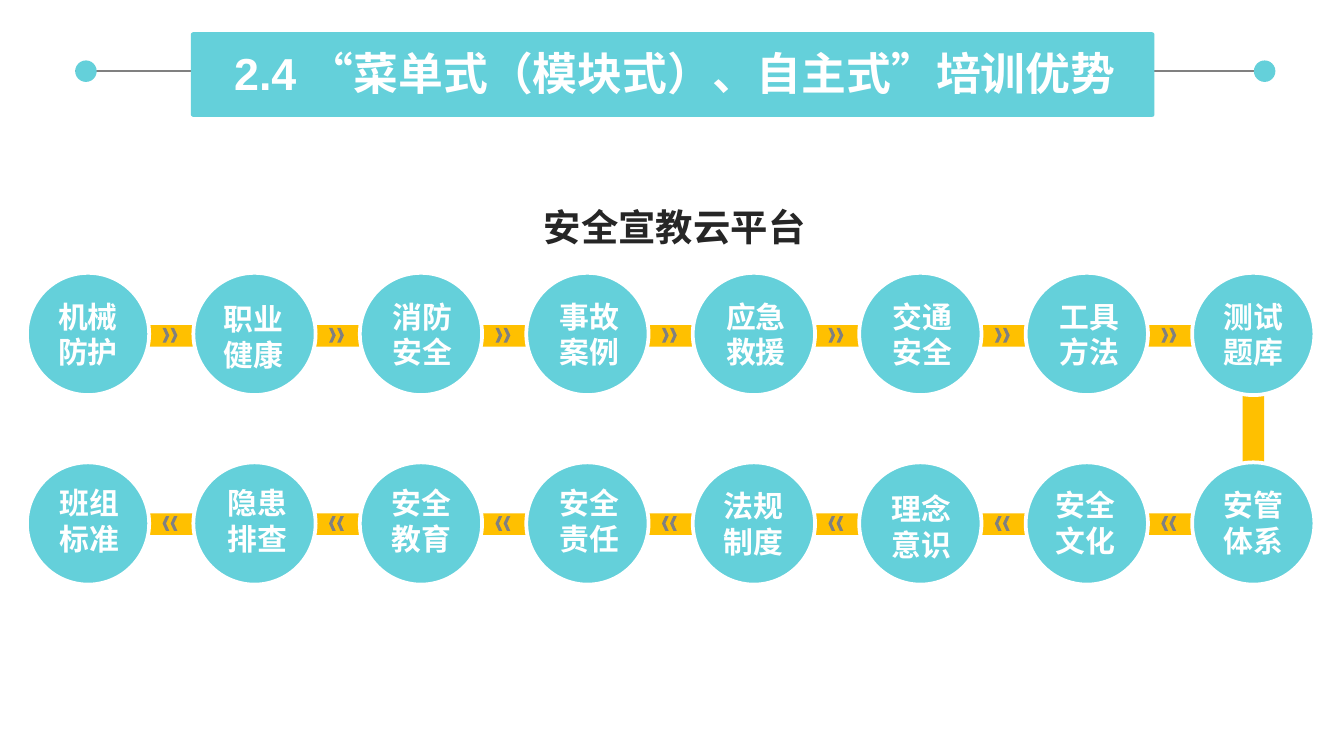
import pptx
import pptx.dml.color
import pptx.enum.shapes
import pptx.enum.text
import pptx.oxml.ns
import pptx.util
from lxml import etree

Inches = pptx.util.Inches
Pt = pptx.util.Pt
SHAPE = pptx.enum.shapes.MSO_SHAPE

TEAL, AMBER, GREY, WHITE, DARK = "64D0DA", "FFC000", "808080", "FFFFFF", "262626"
PITCH = 8.67 / 7
DIAMETER = 0.91
TOP_ROW = [
    ("机械防护", 0.27, 2.17), ("职业健康", 1.5, 2.19), ("消防安全", 2.76, 2.17), ("事故案例", 4, 2.17),
    ("应急救援", 5.24, 2.17), ("交通安全", 6.48, 2.17), ("工具方法", 7.72, 2.17), ("测试题库", 8.94, 2.17),
]
BOTTOM_ROW = [
    ("班组标准", 0.28, 3.56), ("隐患排查", 1.53, 3.56), ("安全教育", 2.75, 3.56), ("安全责任", 4, 3.56),
    ("法规制度", 5.22, 3.58), ("理念意识", 6.47, 3.6), ("安全文化", 7.69, 3.57), ("安管体系", 8.94, 3.57),
]


def rgb(value):
    return pptx.dml.color.RGBColor.from_string(value)


class Deck:
    """Draws styled elements on the current slide."""

    font = "Arial"

    def __init__(self, prs):
        self.s = prs.slides.add_slide(prs.slide_layouts[6])

    def shape(self, kind, x, y, w, h, fill, outline=None, rotation=0, parent=None):
        shapes = (parent or self.s).shapes
        sp = shapes.add_shape(kind, Inches(x), Inches(y), Inches(w), Inches(h))
        sp.shadow.inherit = False
        sp.fill.solid()
        sp.fill.fore_color.rgb = rgb(fill)
        sp.rotation = rotation
        if outline:
            sp.line.color.rgb = rgb(outline)
            sp.line.width = Pt(2)
        else:
            sp.line.fill.background()
        return sp

    def arrows(self, x, y, backward=False):
        group = self.s.shapes.add_group_shape()
        for dx in (0, 0.06):
            sp = self.shape(SHAPE.CHEVRON, x + dx, y, 0.05, 0.11, GREY, parent=group)
            if backward:
                sp._element.spPr.find(pptx.oxml.ns.qn("a:xfrm")).set("flipH", "1")

    def line(self, x1, y1, x2, y2, color):
        cx = self.s.shapes.add_connector(
            pptx.enum.shapes.MSO_CONNECTOR.STRAIGHT, Inches(x1), Inches(y1), Inches(x2), Inches(y2))
        cx.line.color.rgb = rgb(color)
        cx.line.width = Pt(1)
        etree.SubElement(cx._element.spPr, pptx.oxml.ns.qn("a:effectLst"))

    def text(self, words, x, y, w, h, size, color=WHITE):
        tf = self.s.shapes.add_textbox(Inches(x), Inches(y), Inches(w), Inches(h)).text_frame
        tf.word_wrap = True
        tf.auto_size = pptx.enum.text.MSO_AUTO_SIZE.SHAPE_TO_FIT_TEXT
        p = tf.paragraphs[0]
        p.alignment = pptx.enum.text.PP_ALIGN.CENTER
        r = p.add_run()
        r.text = words
        r.font.name = self.font
        r.font.size = Pt(size)
        r.font.bold = True
        r.font.color.rgb = rgb(color)


def main():
    prs = pptx.Presentation()
    prs.slide_width = Inches(10)
    prs.slide_height = prs.slide_width * 9 // 16
    deck = Deck(prs)

    deck.shape(SHAPE.RECTANGLE, 8.89, 3.1, 0.87, 0.16, AMBER, rotation=90)
    for y in (3.82, 2.42):
        deck.shape(SHAPE.RECTANGLE, 0.43, y, 9.13, 0.16, AMBER)

    rows = ((2.03, 2.44, False, TOP_ROW), (3.44, 3.84, True, BOTTOM_ROW))
    for circle_y, arrow_y, backward, row in rows:
        for i, (label, x, y) in enumerate(row):
            deck.shape(SHAPE.OVAL, 0.2 + i * PITCH, circle_y, DIAMETER, DIAMETER, TEAL, outline=WHITE)
            deck.text(label, x, y, 0.77, 0.64, 16)
        for i in range(len(row) - 1):
            deck.arrows(1.21 + i * PITCH, arrow_y, backward)

    deck.line(0.56, 0.53, 9.49, 0.53, GREY)
    banner = deck.shape(SHAPE.ROUNDED_RECTANGLE, 1.42, 0.24, 7.17, 0.63, TEAL)
    banner.adjustments[0] = 0.03
    deck.text("2.4 “菜单式（模块式）、自主式”培训优势", 1.23, 0.29, 7.58, 0.5, 24)
    for x in (0.56, 9.33):
        deck.shape(SHAPE.OVAL, x, 0.45, 0.16, 0.16, TEAL)
    deck.text("安全宣教云平台", 3.2, 1.47, 3.64, 0.44, 20, DARK)

    prs.save("out.pptx")


if __name__ == "__main__":
    main()
